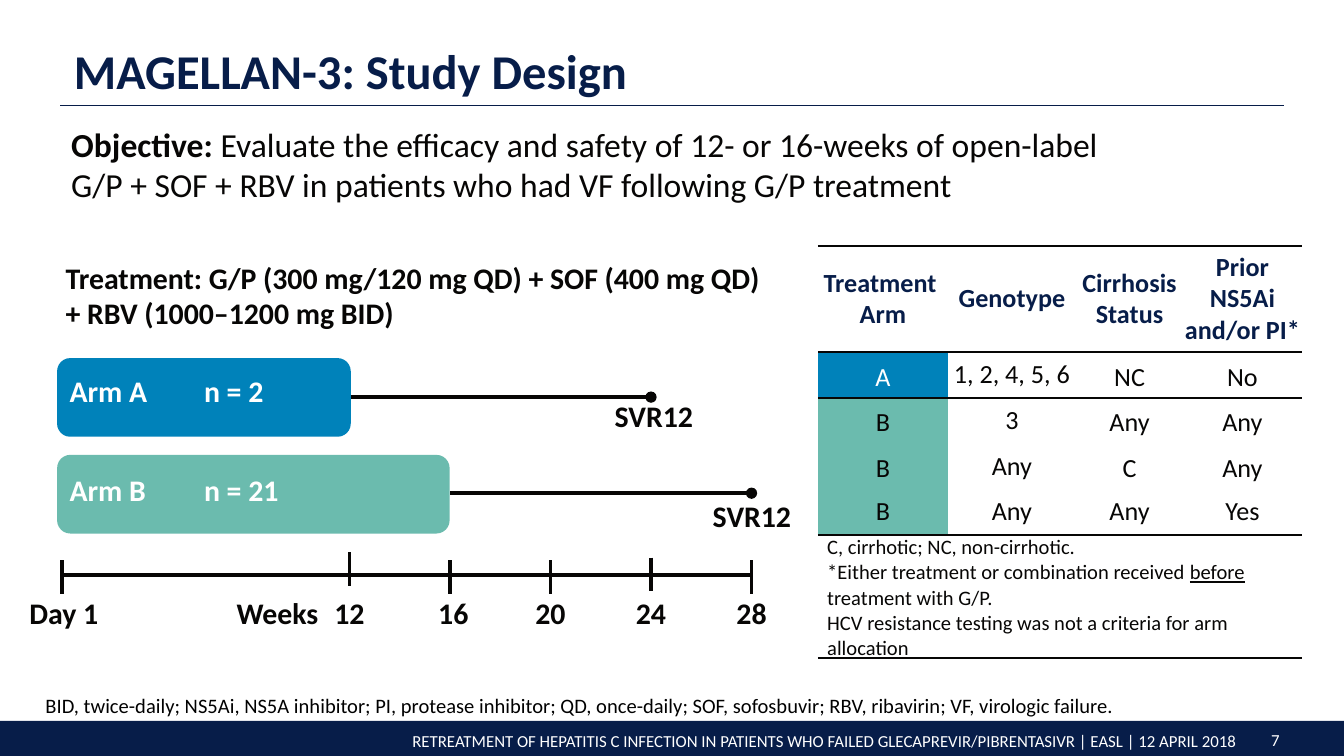
from lxml.etree import SubElement
from pptx import Presentation
from pptx.dml.color import RGBColor as Rgb
from pptx.enum.shapes import MSO_CONNECTOR as Connector, MSO_SHAPE as Preset
from pptx.enum.text import MSO_ANCHOR as Anchor, MSO_AUTO_SIZE as AutoSize, PP_ALIGN as Align
from pptx.oxml import parse_xml
from pptx.oxml.ns import nsdecls, qn
from pptx.util import Inches, Pt

COLORS = {"navy": "071D49", "ink": "070605", "white": "FFFFFF", "black": "000000",
          "arm_a": "0082BA", "arm_b": "6BBBAE"}


def write(frame, paragraphs, size=16, color="ink", bold=False, align=Align.LEFT,
          spacing=1.0, anchor=Anchor.TOP):
    """Fill a frame with paragraphs, each a string or a list of (text, changes)."""
    frame.vertical_anchor = anchor
    for index, content in enumerate(paragraphs):
        para = frame.paragraphs[0] if index == 0 else frame.add_paragraph()
        para.alignment, para.line_spacing = align, spacing
        para.space_before = para.space_after = Pt(0)
        for text, changes in [(content, {})] if isinstance(content, str) else content:
            span = para.add_run()
            span.text = text
            span.font.name, span.font.size = "Calibri", Pt(size)
            span.font.bold = changes.get("bold", bold)
            span.font.underline = changes.get("underline", False)
            span.font.color.rgb = Rgb.from_string(COLORS[color])


class Sheet:
    """Draws on one slide, measured in a grid of 100 columns by 56.25 rows."""

    def __init__(self, deck):
        self.unit = deck.slide_width / 100
        self.page = deck.slides.add_slide(deck.slide_layouts[1])

    def grid(self, *lengths):
        return [round(length * self.unit) for length in lengths]

    def placeholder(self, index, place, paragraphs, **style):
        box = self.page.placeholders[index]
        box.left, box.top, box.width, box.height = self.grid(*place)
        box.text_frame.auto_size = AutoSize.NONE
        write(box.text_frame, paragraphs, **style)
        for para in box.text_frame.paragraphs:
            props = para._p.get_or_add_pPr()
            props.set("marL", "0")
            props.set("indent", "0")
            SubElement(props, qn("a:buNone"))

    def text(self, place, paragraphs, wrap=True, **style):
        box = self.page.shapes.add_textbox(*self.grid(*place))
        box.text_frame.word_wrap = wrap
        write(box.text_frame, paragraphs, **style)

    def block(self, preset, place, color):
        box = self.page.shapes.add_shape(preset, *self.grid(*place))
        box.shadow.inherit = False
        box.fill.solid()
        box.fill.fore_color.rgb = Rgb.from_string(COLORS[color])
        box.line.fill.background()

    def line(self, start, end, color="ink", width=2, dot=False):
        line = self.page.shapes.add_connector(Connector.STRAIGHT, *self.grid(*start, *end))
        line.line.color.rgb = Rgb.from_string(COLORS[color])
        line.line.width = Pt(width)
        if dot:
            SubElement(line.line._get_or_add_ln(), qn("a:tailEnd"), type="oval")
        SubElement(line._element.spPr, qn("a:effectLst"))

    def table(self, place, widths, heights):
        rows, columns = len(heights), len(widths)
        table = self.page.shapes.add_table(rows, columns, *self.grid(*place)).table
        table.first_row = table.horz_banding = False
        for column, width in zip(table.columns, self.grid(*widths)):
            column.width = width
        for row, height in zip(table.rows, self.grid(*heights)):
            row.height = height
        return table

    def cell(self, cell, paragraphs, fill=None, inset=0.07, rules="", **style):
        cell.margin_left = cell.margin_right = Inches(inset)
        cell.margin_top = cell.margin_bottom = 0
        write(cell.text_frame, paragraphs, **style)
        cell.vertical_anchor = Anchor.MIDDLE
        if fill:
            cell.fill.solid()
            cell.fill.fore_color.rgb = Rgb.from_string(COLORS[fill])
        else:
            cell.fill.background()
        solid = f'<a:solidFill><a:srgbClr val="{COLORS["ink"]}"/></a:solidFill>'
        for index, side in enumerate("LRTB"):
            paint = solid if side in rules else "<a:noFill/>"
            border = f'<a:ln{side} w="12700" {nsdecls("a")}>{paint}</a:ln{side}>'
            cell._tc.get_or_add_tcPr().insert(index, parse_xml(border))


def draw_frame(sheet):
    """Draw the title, objective and footer."""
    sheet.block(Preset.RECTANGLE, (0, 53.65, 100, 2.6), "navy")
    sheet.text((5, 53.9, 87.9, 2.5),
               ["RETREATMENT OF HEPATITIS C INFECTION IN PATIENTS WHO FAILED "
                "GLECAPREVIR/PIBRENTASIVR | EASL | 12 APRIL 2018"],
               size=9, color="white", align=Align.RIGHT)
    sheet.text((93, 54, 3.8, 2.4), ["7"], size=9, color="white", align=Align.CENTER, spacing=0.9)
    sheet.line((4.5, 7.85), (95.5, 7.85), "navy", 0.75)
    sheet.placeholder(0, (4.5, 2.15, 91, 5.8), ["MAGELLAN-3: Study Design"], size=26,
                      color="navy", bold=True, spacing=0.9, anchor=Anchor.BOTTOM)
    sheet.placeholder(1, (4.3, 8.7, 91, 7.1), [
        [("Objective: ", {"bold": True}),
         ("Evaluate the efficacy and safety of 12- or 16-weeks of open-label", {})],
        "G/P + SOF + RBV in patients who had VF following G/P treatment"], size=18)
    sheet.text((2.4, 51.1, 83, 2.9),
               ["BID, twice-daily; NS5Ai, NS5A inhibitor; PI, protease inhibitor; QD, once-daily; "
                "SOF, sofosbuvir; RBV, ribavirin; VF, virologic failure."],
               wrap=False, size=11, color="black")


def draw_timeline(sheet):
    """Draw both treatment arms above the week axis."""
    label = {"bold": True, "align": Align.CENTER}
    week_at = {week: 26 + 1.87 * (week - 12) for week in range(12, 29, 4)}
    sheet.text((3.9, 18.8, 54.6, 6.4),
               ["Treatment: G/P (300 mg/120 mg QD) + SOF (400 mg QD) + RBV (1000–1200 mg BID)"],
               bold=True)
    arms = [("Arm A \tn = 2", "arm_a", 26.65, 21.85, 28, 29.55, 24, 48.65, 29.8),
            ("Arm B \tn = 21", "arm_b", 33.85, 29.2, 35.35, 36.7, 28, 55.95, 37.3)]
    for name, color, top, width, name_top, middle, end, result_at, result_top in arms:
        sheet.line((4.3 + width, middle), (week_at[end], middle), dot=True)
        sheet.block(Preset.ROUNDED_RECTANGLE, (4.25, top, width, 5.85), color)
        sheet.text((4.2, name_top, 25, 3), [name], color="white", bold=True, spacing=0.7)
        sheet.text((result_at - 4.85, result_top, 9.7, 2.9), ["SVR12"], spacing=0.7, **label)
    sheet.line((4.6, 42.8), (week_at[28], 42.8))
    tick_tops = {12: 41.1, 24: 41.5}
    label_shifts = {16: 0.25}
    ticks = [("Day 1", 4.6, 41.7, 0.15)]
    ticks += [(str(week), at, tick_tops.get(week, 41.7), label_shifts.get(week, 0))
              for week, at in week_at.items()]
    for name, at, top, shift in ticks:
        sheet.line((at, top), (at, top + 2.5))
        sheet.text((at + shift - 3.75, 44.25, 7.5, 3.2), [name], spacing=0.8, **label)
    sheet.text((15.6, 44.5, 10.1, 2.9), ["Weeks"], spacing=0.7, **label)


def draw_allocation(sheet):
    """Draw the table that assigns patients to the arms."""
    header = [["Treatment ", "Arm"], ["Genotype"], ["Cirrhosis Status"],
              ["Prior NS5Ai and/or PI* "]]
    rows = [("A", "1, 2, 4, 5, 6", "NC", "No"), ("B", "3", "Any", "Any"),
            ("B", "Any", "C", "Any"), ("B", "Any", "Any", "Yes")]
    rules = ["TB", "T", "", "B"]
    table = sheet.table((60.85, 18.3, 36, 30.6), [9.7, 9.5, 8, 8.8], [7.9] + [3.4] * 4 + [9.1])
    for column, lines in enumerate(header):
        sheet.cell(table.cell(0, column), lines, "white", 0.01, "TB", size=14,
                   color="navy", bold=True, align=Align.CENTER)
    for number, values in enumerate(rows, 1):
        for column, value in enumerate(values):
            arm = column == 0
            sheet.cell(table.cell(number, column), [value],
                       f"arm_{value.lower()}" if arm else None,
                       0.01 if column == 1 else 0.07, rules[number - 1], size=14,
                       color="white" if arm and value == "A" else "ink", align=Align.CENTER,
                       spacing=1.0 if column == 1 or number == 4 else 1.15)
    note = table.cell(5, 0)
    note.merge(table.cell(5, 3))
    sheet.cell(note, [
        "C, cirrhotic; NC, non-cirrhotic.",
        [("*Either treatment or combination received ", {}), ("before", {"underline": True}),
         (" treatment with G/P.", {})],
        "HCV resistance testing was not a criteria for arm allocation"], rules="TB", size=11)
    for column in range(1, 4):
        sheet.cell(table.cell(5, column), [], rules="TB")


def main():
    """Build and save the study design slide."""
    deck = Presentation()
    deck.slide_width, deck.slide_height = Inches(10), Inches(10) * 9 // 16
    sheet = Sheet(deck)
    draw_frame(sheet)
    draw_timeline(sheet)
    draw_allocation(sheet)
    deck.save("out.pptx")


if __name__ == "__main__":
    main()
